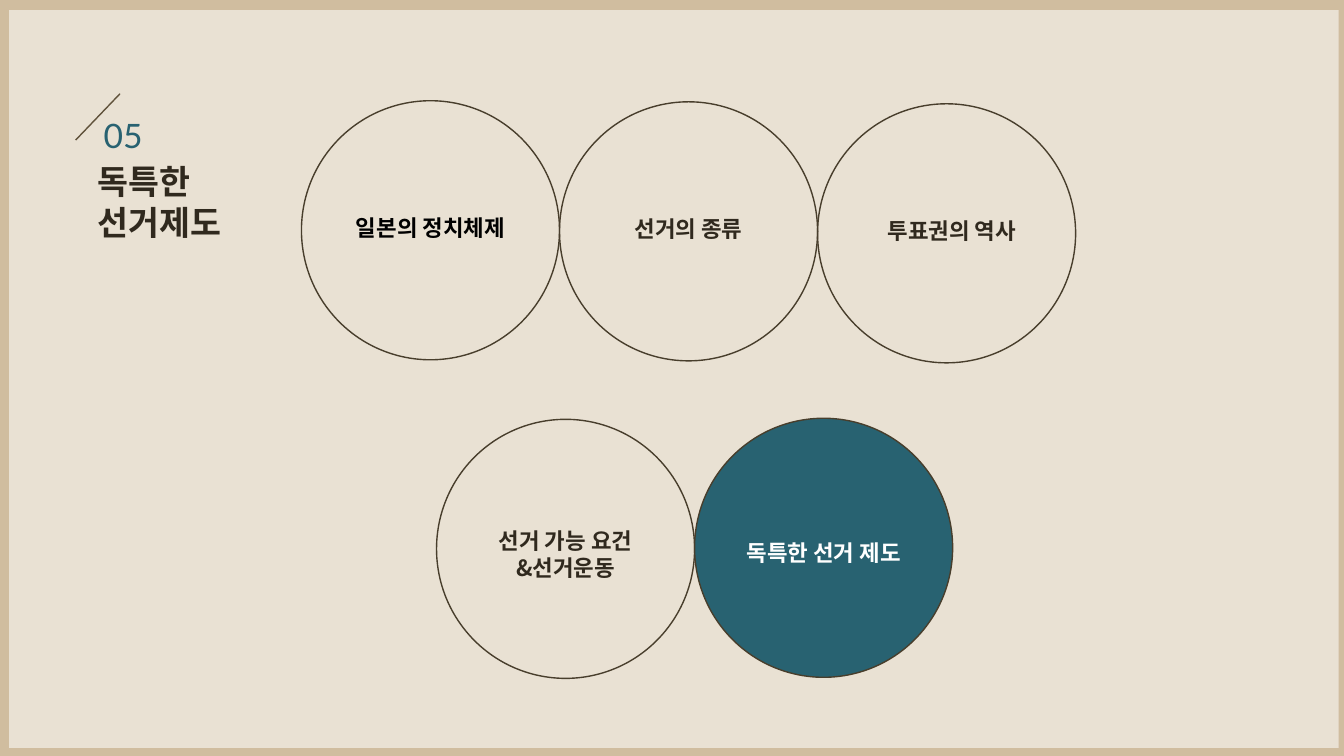
import pptx
import pptx.util
import pptx.dml.color
import pptx.enum.shapes
import pptx.enum.text
import pptx.oxml.ns
import lxml.etree

COLORS = {"sand": "D0BD9F", "white": "FFFFFF", "teal": "286271", "ink": "30291E",
          "black": "000000", "outline": "483E2C", "slash": "60523B"}
KOREAN = "Noto Sans CJK KR"
WIDTH, HEIGHT = pptx.util.Inches(13.33), pptx.util.Inches(7.5)
CIRCLE = (19.2, 34.27)  # width and height, percent of the slide
SHAPES = pptx.enum.shapes.MSO_SHAPE
ALIGN = pptx.enum.text.PP_ALIGN


def color(name):
    return pptx.dml.color.RGBColor.from_string(COLORS[name])


def place(left, top, width, height):
    """Turn percentages of the slide into lengths."""
    return (round(WIDTH * left / 100), round(HEIGHT * top / 100),
            round(WIDTH * width / 100), round(HEIGHT * height / 100))


def add_element(parent, tag, **attributes):
    return lxml.etree.SubElement(parent, pptx.oxml.ns.qn(tag), **attributes)


def write(shape, lines, size, ink, font=KOREAN, bold=True, align=ALIGN.LEFT, wrap=True):
    frame = shape.text_frame
    frame.text = "\n".join(lines)
    frame.word_wrap = wrap
    frame.auto_size = pptx.enum.text.MSO_AUTO_SIZE.SHAPE_TO_FIT_TEXT
    for para in frame.paragraphs:
        para.alignment = align
        para.font.size = pptx.util.Pt(size)
        para.font.name = font
        para.font.bold = bold
        para.font.color.rgb = color(ink)
    for properties in shape.element.iter(pptx.oxml.ns.qn("a:defRPr")):
        add_element(properties, "a:ea", typeface=font)


def add_panel(page, box):
    """Translucent sheet that leaves a sand border around the slide."""
    page.background.fill.solid()
    page.background.fill.fore_color.rgb = color("sand")
    panel = page.shapes.add_shape(SHAPES.RECTANGLE, *place(*box))
    panel.shadow.inherit = False
    panel.line.fill.background()
    panel.fill.solid()
    panel.fill.fore_color.rgb = color("white")
    for tint in panel.element.spPr.iter(pptx.oxml.ns.qn("a:srgbClr")):
        add_element(tint, "a:alpha", val="55000")
    # Bring the title in front of the sheet
    panel.element.addnext(page.shapes.title.element)


def add_heading(page, box, number, lines):
    """Slash, section number and title."""
    left, top, width, height = box
    start_x, start_y, run, drop = place(left + 3.3, top, 3.3, 6.13)
    slash = page.shapes.add_connector(pptx.enum.shapes.MSO_CONNECTOR.STRAIGHT,
                                      start_x, start_y, start_x - run, start_y + drop)
    slash.line.color.rgb = color("slash")
    slash.line.width = pptx.util.Pt(1)
    add_element(slash.element.spPr, "a:effectLst")

    label = page.shapes.add_textbox(*place(left + 1.35, top + 2.13, 5.93, 6.53))
    write(label, [number], 24, "teal", font="Lato", bold=False)

    title = page.shapes.title
    title.left, title.top, title.width, title.height = place(
        left + 0.9, top + 8.27, width - 0.9, height - 8.27)
    title.text_frame.vertical_anchor = pptx.enum.text.MSO_ANCHOR.TOP
    write(title, lines, 24, "ink", wrap=False)


def add_topic(page, box, lines, ink, fill=None, center=(0.5, 0.49), label_width=18.38):
    """Circle with a label; center is a share of the circle."""
    left, top, width, height = box
    circle = page.shapes.add_shape(SHAPES.OVAL, *place(*box))
    circle.shadow.inherit = False
    circle.line.color.rgb = color("outline")
    circle.line.width = pptx.util.Pt(1)
    if fill:
        circle.fill.solid()
        circle.fill.fore_color.rgb = color(fill)
    else:
        circle.fill.background()

    label_height = 4.93 if len(lines) == 1 else 8.4
    label = page.shapes.add_textbox(*place(
        left + width * center[0] - label_width / 2,
        top + height * center[1] - label_height / 2, label_width, label_height))
    write(label, lines, 16, ink, align=ALIGN.CENTER)


def add_topic_row(page, left, topics):
    """Touching circles, each with its own top."""
    width, height = CIRCLE
    for column, (top, lines, style) in enumerate(topics):
        add_topic(page, (left + column * width, top, width, height), lines, **style)


def main():
    deck = pptx.Presentation()
    deck.slide_width, deck.slide_height = WIDTH, HEIGHT
    page = deck.slides.add_slide(deck.slide_layouts[5])
    add_panel(page, (0.68, 1.33, 98.93, 97.6))
    add_heading(page, (5.63, 12.4, 12.38, 20.27), "05", ["독특한", "선거제도"])
    add_topic_row(page, 22.43, [
        (13.33, ["일본의 정치체제"], {"ink": "black"}),
        (13.47, ["선거의 종류"], {"ink": "ink", "label_width": 14.85}),
        (13.73, ["투표권의 역사"], {"ink": "ink", "center": (0.52, 0.49)}),
    ])
    add_topic_row(page, 32.48, [
        (55.47, ["선거 가능 요건", "&선거운동"], {"ink": "ink", "center": (0.5, 0.52)}),
        (55.33, ["독특한 선거 제도"],
         {"ink": "white", "fill": "teal", "center": (0.5, 0.52)}),
    ])
    deck.save("out.pptx")


if __name__ == "__main__":
    main()
